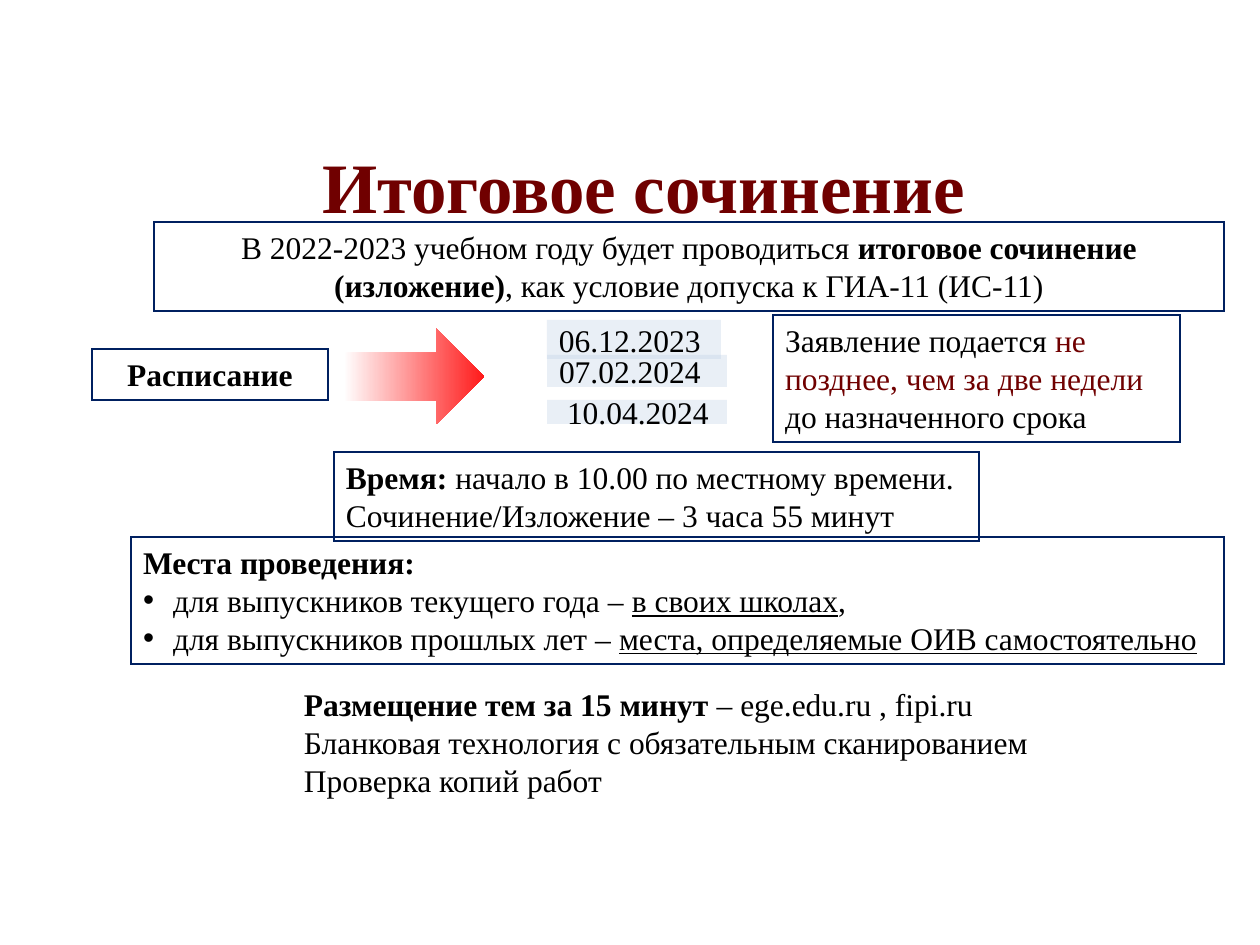
from lxml import etree
from pptx import Presentation
from pptx.dml.color import RGBColor
from pptx.enum.shapes import MSO_SHAPE
from pptx.enum.text import MSO_ANCHOR, MSO_AUTO_SIZE, PP_ALIGN
from pptx.oxml.ns import qn
from pptx.util import Emu, Pt

FONT = "Times New Roman"
BLACK, MAROON, NAVY, PALE_BLUE = "000000", "700000", "002060", "B9CDE5"
BOLD, UNDERLINE, RED = {"bold": True}, {"underline": True}, {"color": MAROON}
INSET, BULLET_INDENT = 12, 30

# Content: a paragraph is a list of (text, format) runs
TITLE = [[("Итоговое сочинение ", {"bold": True, "color": MAROON})]]
TITLE_PLACE = (228, 137, 850, 83)

DATES = [  # text, place, left inset
    ("06.12.2023", (547, 320, 174, 39), INSET),
    ("07.02.2024", (547, 355, 180, 32), INSET),
    ("10.04.2024", (547, 400, 180, 24), INSET + 8),
]
ARROW_PLACE = (366, 306, 96, 141)

BOXES = [  # place, centred, paragraphs, number of the first bulleted paragraph
    ((154, 222, 1070, 89), True, [
        [("В 2022-2023 учебном году будет проводиться ", {}),
         ("итоговое сочинение (изложение)", BOLD),
         (", как условие допуска к ГИА-11 (ИС-11)", {})]], None),
    ((773, 315, 407, 127), False, [
        [("Заявление подается ", {}),
         ("не позднее, чем за две недели ", RED),
         ("до назначенного срока", {})]], None),
    ((92, 349, 236, 51), True, [[("Расписание", BOLD)]], None),
    ((334, 452, 645, 89), False, [
        [("Время:", BOLD), (" начало в 10.00 по местному времени.", {})],
        [("Сочинение/Изложение – 3 часа 55 минут", {})]], None),
    ((131, 537, 1093, 127), False, [
        [("Места проведения:", BOLD)],
        [("для выпускников текущего года – ", {}),
         ("в своих школах", UNDERLINE), (",", {})],
        [("для выпускников прошлых лет – ", {}),
         ("места, определяемые ОИВ самостоятельно", UNDERLINE)]], 1),
]

NOTES_PLACE = (292, 679, 912, 127)
NOTES = [
    [("Размещение тем за 15 минут ", BOLD), ("– ege.edu.ru , fipi.ru", {})],
    [("Бланковая технология с обязательным сканированием", {})],
    [("Проверка копий работ", {})],
]


def px(length):
    return Emu(round(length * 914400 / 126))


def rgb(value):
    return RGBColor.from_string(value)


def add_bullet(para):
    properties = para._p.get_or_add_pPr()
    properties.set("marL", str(px(BULLET_INDENT)))
    properties.set("indent", str(-px(BULLET_INDENT)))
    etree.SubElement(properties, qn("a:buFont")).set("typeface", "Arial")
    etree.SubElement(properties, qn("a:buChar")).set("char", "•")


def write(frame, paragraphs, size=18, align=PP_ALIGN.LEFT,
          anchor=MSO_ANCHOR.TOP, left=INSET, bullets_from=None):
    frame.word_wrap = True
    frame.auto_size = MSO_AUTO_SIZE.NONE
    frame.vertical_anchor = anchor
    frame.margin_left, frame.margin_right = px(left), px(INSET)
    frame.margin_top = frame.margin_bottom = px(6)
    for number, runs in enumerate(paragraphs):
        para = frame.paragraphs[0] if number == 0 else frame.add_paragraph()
        if bullets_from is not None and number >= bullets_from:
            add_bullet(para)
        para.alignment = align
        para.line_spacing = 1.0
        para.space_before = Pt(0)
        for text, style in runs:
            span = para.add_run()
            span.text = text
            span.font.name = FONT
            span.font.size = Pt(size)
            span.font.bold = style.get("bold", False)
            span.font.underline = style.get("underline", False)
            span.font.color.rgb = rgb(style.get("color", BLACK))


def add_shape(slide, kind, place, line=None):
    shape = slide.shapes.add_shape(kind, *map(px, place))
    shape.shadow.inherit = False
    shape.fill.background()
    if line:
        shape.line.color.rgb = rgb(line)
        shape.line.width = Pt(0.75)
        outline = shape._element.spPr.find(qn("a:ln"))
        etree.SubElement(outline, qn("a:miter")).set("lim", "800000")
    else:
        shape.line.fill.background()
    return shape


def main():
    deck = Presentation()
    deck.slide_width, deck.slide_height = px(1260), px(945)
    slide = deck.slides.add_slide(deck.slide_layouts[5])

    # Title
    title = slide.shapes.title
    title.left, title.top, title.width, title.height = map(px, TITLE_PLACE)
    write(title.text_frame, TITLE, size=40.5, align=PP_ALIGN.CENTER)

    # Dates on translucent bars
    for text, place, left in DATES:
        bar = add_shape(slide, MSO_SHAPE.RECTANGLE, place)
        bar.fill.solid()
        bar.fill.fore_color.rgb = rgb(PALE_BLUE)
        color = next(bar._element.spPr.iter(qn("a:srgbClr")))
        etree.SubElement(color, qn("a:alpha")).set("val", "31000")
        write(bar.text_frame, [[(text, {})]], anchor=MSO_ANCHOR.MIDDLE, left=left)

    # Arrow from the schedule to the dates, turned to point right
    arrow = add_shape(slide, MSO_SHAPE.DOWN_ARROW, ARROW_PLACE)
    arrow.rotation = 270
    arrow.fill.gradient()
    arrow.fill.gradient_angle = 270
    for stop, color in zip(arrow.fill.gradient_stops, ("FFFFFF", "FF1A1A")):
        stop.color.rgb = rgb(color)

    # Outlined boxes
    for place, centred, paragraphs, bullets_from in BOXES:
        box = add_shape(slide, MSO_SHAPE.RECTANGLE, place, line=NAVY)
        write(box.text_frame, paragraphs, bullets_from=bullets_from,
              align=PP_ALIGN.CENTER if centred else PP_ALIGN.LEFT)

    # Closing notes
    notes = slide.shapes.add_textbox(*map(px, NOTES_PLACE))
    write(notes.text_frame, NOTES)

    deck.save("out.pptx")


if __name__ == "__main__":
    main()
